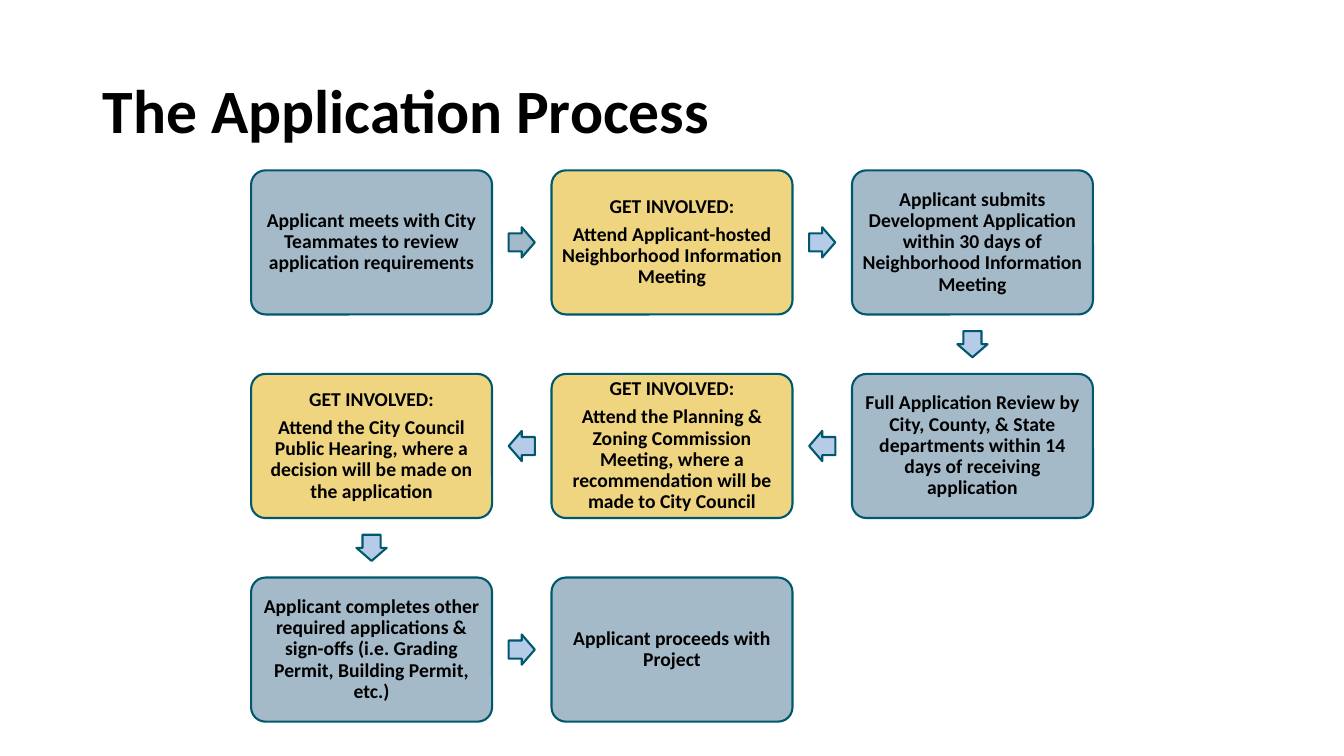
from itertools import pairwise

from pptx import Presentation
from pptx.dml.color import RGBColor
from pptx.enum import shapes, text
from pptx.util import Inches, Pt

BLACK = RGBColor(0x00, 0x00, 0x00)
TEAL = RGBColor(0x00, 0x58, 0x6F)
SLATE = RGBColor(0xA5, 0xBA, 0xC9)
GOLD = RGBColor(0xEF, 0xD5, 0x80)
PALE_BLUE = RGBColor(0xB5, 0xCB, 0xE7)

FONT = "Calibri"
GRID_LEFT, GRID_TOP = 2.49, 1.69
COLUMN_STEP, ROW_STEP = 2.98, 2.02
BOX_WIDTH, BOX_HEIGHT = 2.39, 1.43
ARROW_LENGTH, ARROW_WIDTH = 0.26, 0.3
GET_INVOLVED = "GET INVOLVED:"

# Column, row and paragraphs of each step, in the order of the process
STEPS = [
    (0, 0, ["Applicant meets with City Teammates to review application requirements"]),
    (1, 0, [GET_INVOLVED,
            "Attend Applicant-hosted Neighborhood Information Meeting"]),
    (2, 0, ["Applicant submits Development Application within 30 days of "
            "Neighborhood Information Meeting"]),
    (2, 1, ["Full Application Review by City, County, & State departments "
            "within 14 days of receiving application"]),
    (1, 1, [GET_INVOLVED,
            "Attend the Planning & Zoning Commission Meeting, where a "
            "recommendation will be made to City Council"]),
    (0, 1, [GET_INVOLVED,
            "Attend the City Council Public Hearing, where a decision will be "
            "made on the application"]),
    (0, 2, ["Applicant completes other required applications & sign-offs "
            "(i.e. Grading Permit, Building Permit, etc.)"]),
    (1, 2, ["Applicant proceeds with Project"]),
]


def add_span(para, words, size):
    span = para.add_run()
    span.text = words
    span.font.name = FONT
    span.font.size = Pt(size)
    span.font.bold = True
    span.font.color.rgb = BLACK


def set_title(page, words):
    title = page.shapes.title
    title.left, title.top = Inches(0.92), Inches(0.4)
    title.width, title.height = Inches(11.5), Inches(1.45)
    title.text_frame.vertical_anchor = text.MSO_ANCHOR.MIDDLE
    para = title.text_frame.paragraphs[0]
    para.alignment = text.PP_ALIGN.LEFT
    para.line_spacing = 0.9
    add_span(para, words, 44)


def add_outlined(page, kind, left, top, width, height, fill):
    """Add a filled preset shape with the teal outline; lengths in inches."""
    shape = page.shapes.add_shape(
        kind, Inches(left), Inches(top), Inches(width), Inches(height))
    shape.shadow.inherit = False
    shape.fill.solid()
    shape.fill.fore_color.rgb = fill
    shape.line.color.rgb = TEAL
    shape.line.width = Pt(1.5)
    return shape


def add_step(page, column, row, paragraphs):
    fill = GOLD if paragraphs[0] == GET_INVOLVED else SLATE
    box = add_outlined(
        page, shapes.MSO_SHAPE.ROUNDED_RECTANGLE,
        GRID_LEFT + column * COLUMN_STEP, GRID_TOP + row * ROW_STEP,
        BOX_WIDTH, BOX_HEIGHT, fill)
    box.adjustments[0] = 0.1
    frame = box.text_frame
    frame.word_wrap = True
    frame.vertical_anchor = text.MSO_ANCHOR.MIDDLE
    # The rounded corners already inset the text by 0.04 inches
    frame.margin_left = frame.margin_right = Inches(0.06)
    frame.margin_top = frame.margin_bottom = Inches(0.06)
    for index, words in enumerate(paragraphs):
        para = frame.add_paragraph() if index else frame.paragraphs[0]
        para.alignment = text.PP_ALIGN.CENTER
        para.line_spacing = 0.9
        if index:
            para.space_before = Pt(4.9)
        add_span(para, words, 14)


def add_arrow(page, start, end, fill):
    """Add a block arrow midway between two neighbouring grid cells."""
    column = (start[0] + end[0]) / 2
    row = (start[1] + end[1]) / 2
    center_x = GRID_LEFT + column * COLUMN_STEP + BOX_WIDTH / 2
    center_y = GRID_TOP + row * ROW_STEP + BOX_HEIGHT / 2
    arrow = add_outlined(
        page, shapes.MSO_SHAPE.RIGHT_ARROW,
        center_x - ARROW_LENGTH / 2, center_y - ARROW_WIDTH / 2,
        ARROW_LENGTH, ARROW_WIDTH, fill)
    arrow.adjustments[0] = 0.6
    arrow.adjustments[1] = 0.5
    if end[1] > start[1]:
        arrow.rotation = 90
    elif end[0] < start[0]:
        arrow.rotation = 180


def main():
    deck = Presentation()
    deck.slide_width, deck.slide_height = Inches(13.33), Inches(7.5)
    page = deck.slides.add_slide(deck.slide_layouts.get_by_name("Title Only"))
    set_title(page, "The Application Process")
    for column, row, paragraphs in STEPS:
        add_step(page, column, row, paragraphs)
    for index, (step, following) in enumerate(pairwise(STEPS)):
        add_arrow(page, step[:2], following[:2], PALE_BLUE if index else SLATE)
    deck.save("out.pptx")


if __name__ == "__main__":
    main()
